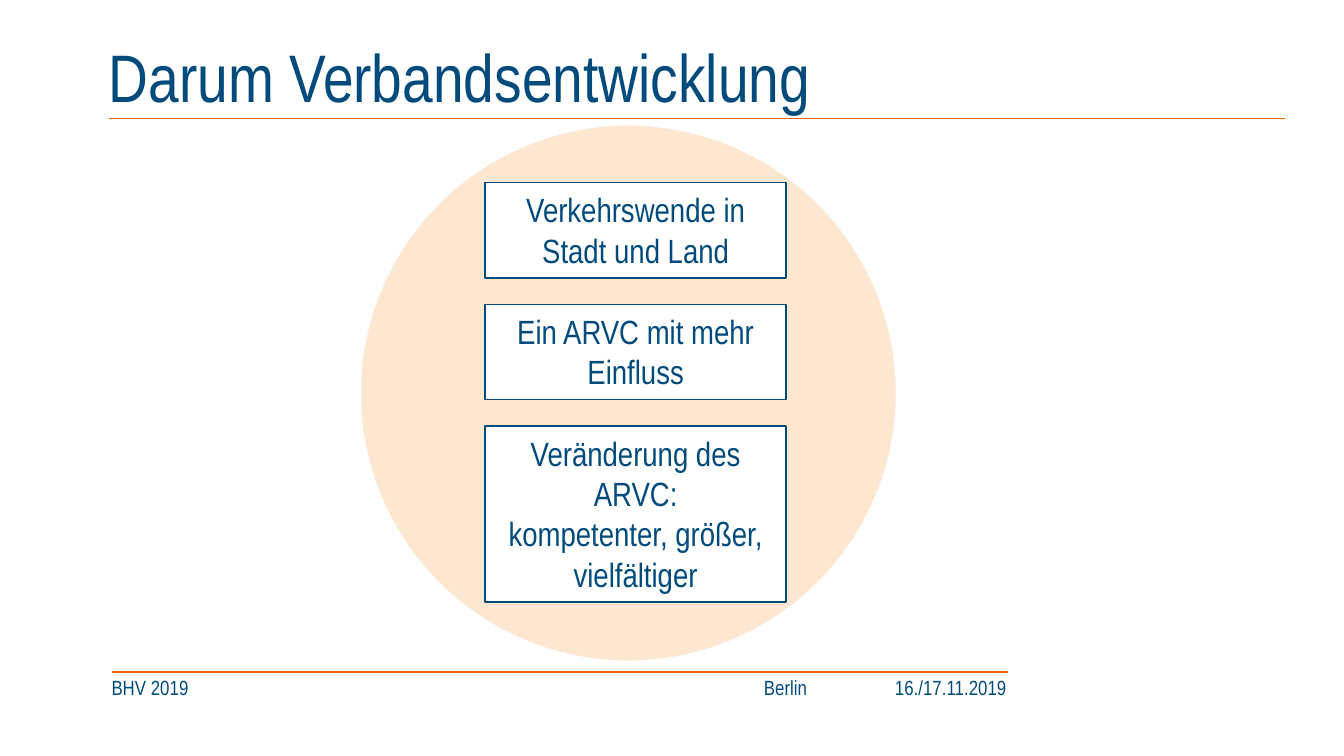
from dataclasses import dataclass

from lxml.etree import SubElement
from pptx import Presentation
from pptx.dml.color import RGBColor
from pptx.enum.shapes import MSO_CONNECTOR, MSO_SHAPE
from pptx.enum.text import MSO_ANCHOR, MSO_AUTO_SIZE, PP_ALIGN
from pptx.oxml.ns import qn
from pptx.util import Inches, Pt


@dataclass(frozen=True)
class Theme:
    font: str = "Arial Narrow"
    navy: RGBColor = RGBColor(0x00, 0x4B, 0x7C)
    orange: RGBColor = RGBColor(0xE3, 0x65, 0x00)
    peach: RGBColor = RGBColor(0xFD, 0xE7, 0xD0)
    white: RGBColor = RGBColor(0xFF, 0xFF, 0xFF)
    title_size: Pt = Pt(36)
    goal_size: Pt = Pt(18)
    footer_size: Pt = Pt(11)
    line_width: Pt = Pt(0.75)


THEME = Theme()

TITLE = "Darum Verbandsentwicklung"
GOALS = [
    (["Verkehrswende in Stadt und Land"], 0.71),
    (["Ein ARVC mit mehr Einfluss"], 0.71),
    (["Veränderung des ARVC:\u00a0".rstrip(), "kompetenter, größer, vielfältiger"], 1.31),
]
GOAL_LEFT, GOAL_TOP, GOAL_WIDTH, GOAL_BOTTOM = 3.61, 1.36, 2.24, 4.48
FOOTER = [
    ("BHV 2019", 4.33, PP_ALIGN.LEFT),
    ("", 0.39, PP_ALIGN.LEFT),
    ("Berlin", 0.59, PP_ALIGN.CENTER),
    ("", 0.03, PP_ALIGN.LEFT),
    ("16./17.11.2019", 1.31, PP_ALIGN.RIGHT),
]
RULES = [(0.83, 7.5, 5), (0.81, 9.56, 0.88)]


def set_font(paragraph, size):
    paragraph.font.name = THEME.font
    paragraph.font.size = size
    paragraph.font.color.rgb = THEME.navy


def add_rule(slide, left, right, y):
    rule = slide.shapes.add_connector(
        MSO_CONNECTOR.STRAIGHT, Inches(left), Inches(y), Inches(right), Inches(y))
    rule.line.color.rgb = THEME.orange
    rule.line.width = THEME.line_width
    SubElement(rule._element.spPr, qn("a:effectLst"))


def add_filled(slide, kind, box, fill, outline):
    shape = slide.shapes.add_shape(kind, *map(Inches, box))
    shape.shadow.inherit = False
    shape.fill.solid()
    shape.fill.fore_color.rgb = fill
    shape.line.color.rgb = outline
    shape.line.width = THEME.line_width
    return shape


def clear_borders(cell):
    properties = cell._tc.get_or_add_tcPr()
    for side in ("lnL", "lnR", "lnT", "lnB"):
        border = SubElement(properties, qn(f"a:{side}"), w="0")
        SubElement(border, qn("a:noFill"))


def add_footer(slide):
    width = sum(column_width for _, column_width, _ in FOOTER)
    footer = slide.shapes.add_table(
        1, len(FOOTER), Inches(0.83), Inches(5.06), Inches(width), Inches(0.18)).table
    footer.first_row = False
    footer.horz_banding = False
    for column, (text, column_width, alignment) in enumerate(FOOTER):
        footer.columns[column].width = Inches(column_width)
        cell = footer.cell(0, column)
        clear_borders(cell)
        cell.fill.background()
        cell.margin_left = cell.margin_right = cell.margin_top = cell.margin_bottom = 0
        cell.text = text
        entry = cell.text_frame.paragraphs[0]
        entry.alignment = alignment
        set_font(entry, THEME.footer_size)


def set_title(slide):
    title = slide.shapes.title
    title.left, title.top, title.width, title.height = map(Inches, (0.81, 0.31, 9, 0.6))
    frame = title.text_frame
    frame.text = TITLE
    frame.word_wrap = False
    frame.auto_size = MSO_AUTO_SIZE.NONE
    frame.vertical_anchor = MSO_ANCHOR.MIDDLE
    frame.margin_left = frame.margin_right = frame.margin_top = frame.margin_bottom = 0
    heading = frame.paragraphs[0]
    heading.alignment = PP_ALIGN.LEFT
    heading.line_spacing = THEME.title_size
    set_font(heading, THEME.title_size)


def add_goals(slide):
    free = GOAL_BOTTOM - GOAL_TOP - sum(height for _, height in GOALS)
    gap = free / (len(GOALS) - 1)
    top = GOAL_TOP
    for lines, height in GOALS:
        goal = add_filled(slide, MSO_SHAPE.RECTANGLE,
                          (GOAL_LEFT, top, GOAL_WIDTH, height), THEME.white, THEME.navy)
        frame = goal.text_frame
        frame.word_wrap = True
        frame.auto_size = MSO_AUTO_SIZE.SHAPE_TO_FIT_TEXT
        frame.vertical_anchor = MSO_ANCHOR.TOP
        frame.text = "\n".join(lines)
        for paragraph in frame.paragraphs:
            paragraph.alignment = PP_ALIGN.CENTER
            set_font(paragraph, THEME.goal_size)
        top += height + gap


def main():
    deck = Presentation()
    deck.slide_width = Inches(10)
    deck.slide_height = deck.slide_width * 9 // 16
    slide = deck.slides.add_slide(deck.slide_layouts.get_by_name("Title Only"))
    for rule in RULES:
        add_rule(slide, *rule)
    add_footer(slide)
    add_filled(slide, MSO_SHAPE.FLOWCHART_CONNECTOR,
               (2.68, 0.93, 3.99, 3.99), THEME.peach, THEME.white)
    set_title(slide)
    add_goals(slide)
    deck.save("out.pptx")


if __name__ == "__main__":
    main()
